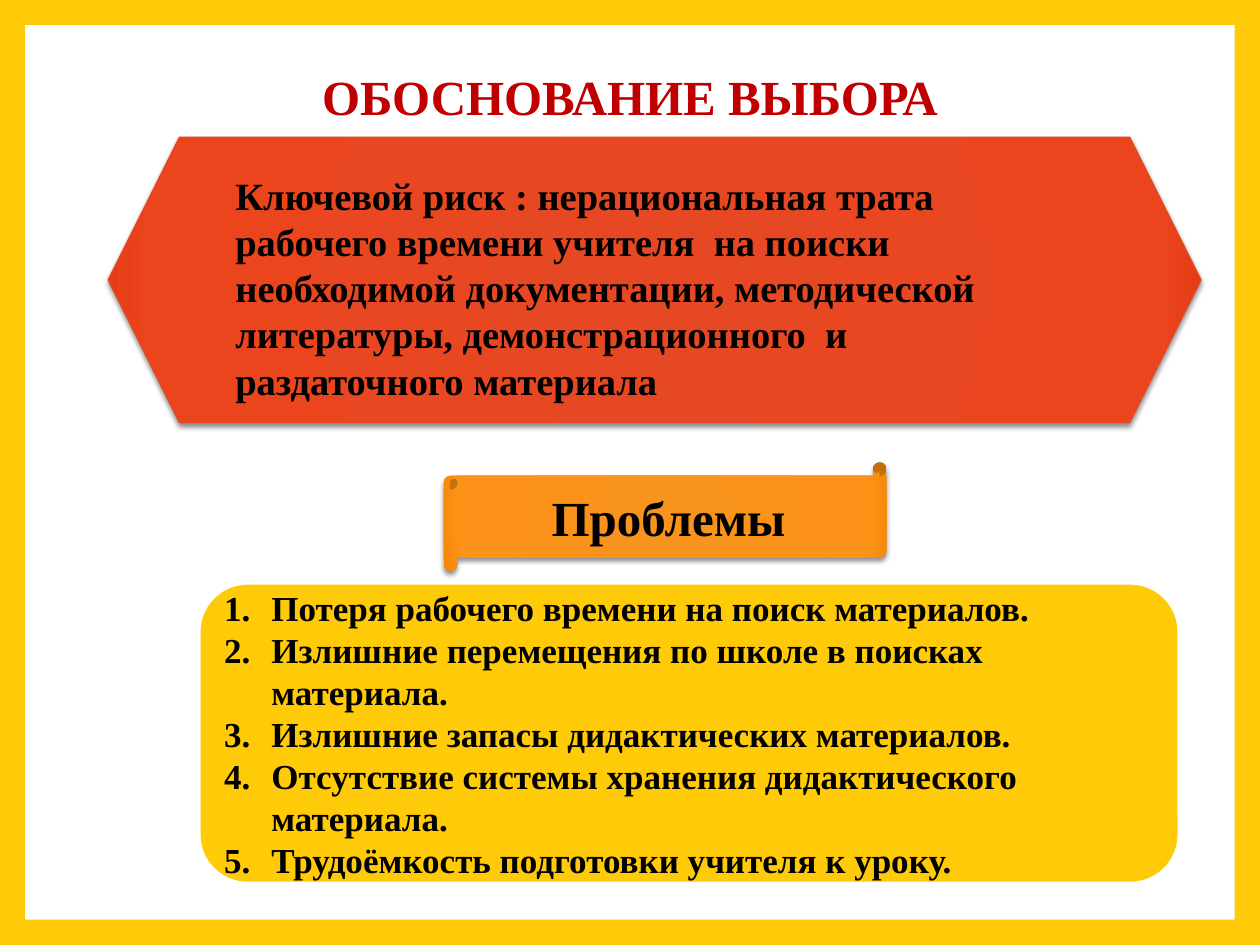
import dataclasses

import lxml.etree
import pptx
import pptx.dml.color
import pptx.enum.shapes
import pptx.enum.text
import pptx.oxml
import pptx.oxml.ns
import pptx.util

Pt = pptx.util.Pt
Kind = pptx.enum.shapes.MSO_SHAPE
Align = pptx.enum.text.PP_ALIGN
Anchor = pptx.enum.text.MSO_ANCHOR
NS = pptx.oxml.ns.nsdecls("a")


@dataclasses.dataclass(frozen=True)
class Theme:
    font: str = "Times New Roman"
    gold: str = "FFCA08"
    white: str = "FFFFFF"
    red: str = "C00000"
    black: str = "000000"
    edge: str = "E64823"
    risk: tuple = ((0, "E64823"), (90, "EB451E"), (100, "E2360E"))
    scroll: tuple = ((0, "F8931D"), (90, "FD9318"), (100, "F58706"))
    head: int = 28
    body: int = 22
    item: int = 20


THEME = Theme()


def color(code):
    return pptx.dml.color.RGBColor.from_string(code)


def add_shape(slide, kind, box, fill=None, line=None, width=1):
    shape = slide.shapes.add_shape(kind, *map(Pt, box))
    shape.shadow.inherit = False
    if fill:
        shape.fill.solid()
        shape.fill.fore_color.rgb = color(fill)
    if line:
        shape.line.color.rgb = color(line)
        shape.line.width = Pt(width)
    else:
        shape.line.fill.background()
    return shape


def add_glow(shape, stops):
    """Give the shape a radial gradient and a soft shadow below it."""
    marks = "".join(
        f'<a:gs pos="{pos * 1000}"><a:srgbClr val="{code}"/></a:gs>'
        for pos, code in stops
    )
    grad = pptx.oxml.parse_xml(
        f'<a:gradFill {NS} rotWithShape="1"><a:gsLst>{marks}</a:gsLst>'
        '<a:path path="circle"><a:fillToRect l="100000" t="100000" '
        'r="100000" b="100000"/></a:path></a:gradFill>'
    )
    props = shape.element.spPr
    props.find(pptx.oxml.ns.qn("a:prstGeom")).addnext(grad)
    props.find(pptx.oxml.ns.qn("a:effectLst")).append(pptx.oxml.parse_xml(
        f'<a:outerShdw {NS} blurRad="{Pt(3)}" dist="{Pt(2)}" dir="5400000" '
        f'rotWithShape="0"><a:srgbClr val="{THEME.black}">'
        '<a:alpha val="45000"/></a:srgbClr></a:outerShdw>'
    ))


def write(shape, lines, size, ink=THEME.black, align=Align.LEFT):
    frame = shape.text_frame
    frame.word_wrap = True
    frame.vertical_anchor = Anchor.MIDDLE
    frame.text = "\n".join(lines)
    for para in frame.paragraphs:
        para.alignment = align
        para.font.name = THEME.font
        para.font.size = Pt(size)
        para.font.bold = True
        para.font.color.rgb = color(ink)
    return frame


def number(para, indent):
    props = para._p.get_or_add_pPr()
    props.set("marL", str(Pt(indent)))
    props.set("indent", str(Pt(-indent)))
    props.insert(0, pptx.oxml.parse_xml(
        f'<a:buAutoNum {NS} type="arabicPeriod"/>'))


def add_page(slide, box, rim):
    """Lay a white sheet inside a gold rim."""
    back = slide.background.fill
    back.solid()
    back.fore_color.rgb = color(THEME.gold)
    left, top, width, height = box
    sheet = (left + rim, top + rim, width - 2 * rim, height - 2 * rim)
    add_shape(slide, Kind.RECTANGLE, sheet, THEME.white)


def add_title(slide, box, text):
    title = slide.shapes.add_textbox(*map(Pt, box))
    frame = write(title, [text], THEME.head, THEME.red, Align.CENTER)
    frame.paragraphs[0].line_spacing = 0.9


def add_list(slide, box, items):
    panel = add_shape(slide, Kind.ROUNDED_RECTANGLE, box,
                      THEME.gold, THEME.white, 4.25)
    for para in write(panel, items, THEME.item).paragraphs:
        number(para, 27)


def add_risk(slide, box, text):
    shape = add_shape(slide, Kind.HEXAGON, box, line=THEME.edge, width=0.79)
    add_glow(shape, THEME.risk)
    write(shape, [text], THEME.body).margin_top = Pt(12)


def add_scroll(slide, box, text):
    shape = add_shape(slide, Kind.HORIZONTAL_SCROLL, box)
    add_glow(shape, THEME.scroll)
    write(shape, [text], THEME.head, align=Align.CENTER)


def main():
    deck = pptx.Presentation()
    deck.slide_width, deck.slide_height = Pt(720), Pt(540)
    slide = deck.slides.add_slide(deck.slide_layouts[6])
    add_page(slide, (0, 0, 720, 540), 14.4)
    add_title(slide, (68.4, 22.3, 583.2, 69), "ОБОСНОВАНИЕ ВЫБОРА")
    add_list(slide, (112.5, 332, 562.5, 174), [
        "Потеря рабочего времени на поиск материалов.",
        "Излишние перемещения по школе в поисках материала.",
        "Излишние запасы дидактических материалов.",
        "Отсутствие системы хранения дидактического материала.",
        "Трудоёмкость подготовки учителя к уроку.",
    ])
    add_risk(slide, (61.8, 78.5, 624.5, 163), (
        "Ключевой риск : нерациональная трата рабочего времени учителя  "
        "на поиски необходимой документации, методической литературы, "
        "демонстрационного  и раздаточного материала"
    ))
    add_scroll(slide, (253.5, 264.2, 253.2, 62.2), "Проблемы")
    deck.save("out.pptx")


if __name__ == "__main__":
    main()
